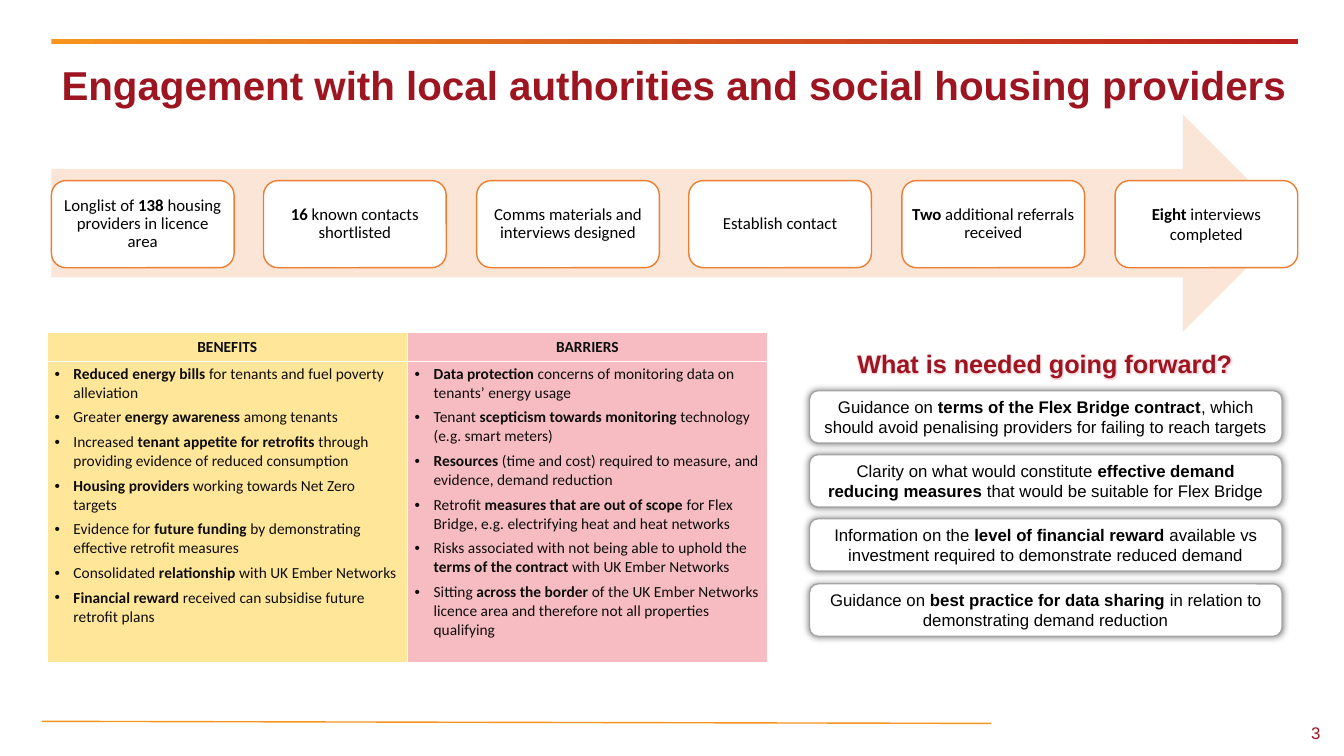
from lxml import etree
from pptx import Presentation
from pptx.dml.color import RGBColor
from pptx.enum.shapes import MSO_CONNECTOR, MSO_SHAPE
from pptx.enum.text import MSO_ANCHOR, MSO_AUTO_SIZE, PP_ALIGN
from pptx.oxml import parse_xml
from pptx.oxml.ns import nsdecls, qn
from pptx.util import Pt

PX = 9525  # EMU per px, 96 px to the inch
CRIMSON = RGBColor(0x9C, 0x15, 0x21)
AMBER = RGBColor(0xF7, 0x94, 0x1E)
RED = RGBColor(0xBA, 0x21, 0x1E)
ORANGE = RGBColor(0xED, 0x7D, 0x31)
PEACH = RGBColor(0xFB, 0xE5, 0xD6)
YELLOW = RGBColor(0xFF, 0xE6, 0x99)
PINK = RGBColor(0xF6, 0xBC, 0xC2)
GREY = RGBColor(0xA5, 0xA5, 0xA5)
INK = RGBColor(0x0D, 0x0D, 0x0D)
BLACK = RGBColor(0, 0, 0)
WHITE = RGBColor(0xFF, 0xFF, 0xFF)

STEPS = [
    "Longlist of **138** housing providers in licence area",
    "**16** known contacts shortlisted",
    "Comms materials and interviews designed",
    "Establish contact",
    "**Two** additional referrals received",
    "**Eight** interviews completed",
]
BENEFITS = [
    "**Reduced energy bills **for tenants and fuel poverty alleviation",
    "Greater **energy awareness **among tenants",
    "Increased** tenant appetite for retrofits **through providing evidence of reduced consumption",
    "**Housing providers **working towards Net Zero targets",
    "Evidence for **future funding **by demonstrating effective retrofit measures",
    "Consolidated **relationship** with UK Ember Networks",
    "**Financial reward **received can subsidise future retrofit plans",
]
BARRIERS = [
    "**Data protection **concerns of monitoring data on tenants’ energy usage",
    "Tenant **scepticism towards monitoring **technology (e.g. smart meters)",
    "**Resources** (time and cost) required to measure, and evidence, demand reduction",
    "Retrofit **measures that are out of scope **for Flex Bridge, e.g. electrifying heat and heat networks",
    "Risks associated with not being able to uphold the **terms of the contract** with UK Ember Networks",
    "Sitting **across the border **of the UK Ember Networks licence area and therefore not all properties qualifying",
]
NEEDS = [
    "Guidance on **terms of the Flex Bridge contract**, which should avoid penalising providers for failing to reach targets",
    "Clarity on what would constitute **effective demand reducing measures **that would be suitable for Flex Bridge",
    "Information on the **level of financial reward **available vs investment required to demonstrate reduced demand",
    "Guidance on **best practice for data sharing **in relation to demonstrating demand reduction",
]


def write(p, text, size, font, color, align=PP_ALIGN.LEFT):
    """Fill a paragraph with runs; text between ** marks is bold."""
    p.alignment = align
    for i, part in enumerate(text.split("**")):
        if part:
            r = p.add_run()
            r.text = part
            r.font.size, r.font.name = Pt(size), font
            r.font.bold = i % 2 == 1
            r.font.color.rgb = color


def add_box(kind, x, y, w, h, fill, line=None):
    sp = s.shapes.add_shape(kind, x * PX, y * PX, w * PX, h * PX)
    sp.shadow.inherit = False
    sp.fill.solid()
    sp.fill.fore_color.rgb = fill
    if line is None:
        sp.line.fill.background()
    else:
        sp.line.color.rgb = line
        sp.line.width = Pt(1)
    sp.text_frame.word_wrap = True
    sp.text_frame.vertical_anchor = MSO_ANCHOR.MIDDLE
    return sp


prs = Presentation()
prs.slide_width, prs.slide_height = 1280 * PX, 720 * PX
s = prs.slides.add_slide(prs.slide_layouts[5])

# Header and footer rules, page number
bar = add_box(MSO_SHAPE.RECTANGLE, 49, 37, 1187, 5, AMBER)
bar.fill.gradient()
bar.fill.gradient_angle = 0
for stop, color in zip(bar.fill.gradient_stops, (AMBER, RED)):
    stop.color.rgb = color

rule = s.shapes.add_connector(MSO_CONNECTOR.STRAIGHT, 40 * PX, 687 * PX, 944 * PX, 689 * PX)
rule.line.color.rgb = AMBER
rule.line.width = Pt(1)
etree.SubElement(rule._element.spPr, qn("a:effectLst"))

number = s.shapes.add_textbox(1129 * PX, 684 * PX, 138 * PX, 29 * PX)
write(number.text_frame.paragraphs[0], "3", 12, "Arial", CRIMSON, PP_ALIGN.RIGHT)

# Title
title = s.shapes.title
title.left, title.top, title.width, title.height = 49 * PX, 56 * PX, 1224 * PX, 54 * PX
tf = title.text_frame
tf.auto_size = MSO_AUTO_SIZE.NONE
tf.vertical_anchor = MSO_ANCHOR.MIDDLE
tf.paragraphs[0].line_spacing = 0.9
write(tf.paragraphs[0], "**Engagement with local authorities and social housing providers**",
      28.8, "Arial", CRIMSON)

# Process arrow with its steps
add_box(MSO_SHAPE.RIGHT_ARROW, 49, 109, 1181, 207, PEACH)
for i, text in enumerate(STEPS):
    sp = add_box(MSO_SHAPE.ROUNDED_RECTANGLE, 49 + i * 1013 // 5, 172, 174, 83, WHITE, ORANGE)
    tf = sp.text_frame
    tf.margin_left = tf.margin_right = tf.margin_top = tf.margin_bottom = 5 * PX
    p = tf.paragraphs[0]
    p.line_spacing = 1.0 if i == len(STEPS) - 1 else 0.9
    write(p, text, 12, "Calibri", BLACK, PP_ALIGN.CENTER)

# Benefits and barriers
table = s.shapes.add_table(2, 2, 45 * PX, 317 * PX, 686 * PX, 314 * PX).table
table.rows[0].height, table.rows[1].height = 27 * PX, 287 * PX
columns = [("BENEFITS", BENEFITS, YELLOW), ("BARRIERS", BARRIERS, PINK)]
for col, (heading, points, fill) in enumerate(columns):
    table.columns[col].width = 343 * PX
    head, body = table.cell(0, col), table.cell(1, col)
    for cell in (head, body):
        cell.fill.solid()
        cell.fill.fore_color.rgb = fill
        cell.margin_left = cell.margin_right = 7 * PX
        cell.margin_top = cell.margin_bottom = 3 * PX
    head.vertical_anchor = MSO_ANCHOR.MIDDLE
    write(head.text_frame.paragraphs[0], f"**{heading}**", 11, "Calibri", INK, PP_ALIGN.CENTER)
    tf = body.text_frame
    for i, text in enumerate(points):
        p = tf.add_paragraph() if i else tf.paragraphs[0]
        pPr = p._p.get_or_add_pPr()
        pPr.set("marL", str(18 * PX))
        pPr.set("indent", str(-18 * PX))
        etree.SubElement(pPr, qn("a:buFont"), typeface="Arial")
        etree.SubElement(pPr, qn("a:buChar"), char="•")
        p.space_before = Pt(2 if i else 0)
        p.space_after = Pt(2)
        write(p, text, 11, "Calibri", INK)

# What is needed going forward
for i, text in enumerate(NEEDS):
    sp = add_box(MSO_SHAPE.ROUNDED_RECTANGLE, 771, 372 + i * 184 // 3, 450, 50, WHITE, GREY)
    sp._element.spPr.find(qn("a:effectLst")).append(parse_xml(
        f'<a:outerShdw {nsdecls("a")} blurRad="63500" algn="ctr" rotWithShape="0">'
        '<a:srgbClr val="000000"><a:alpha val="50000"/></a:srgbClr></a:outerShdw>'))
    write(sp.text_frame.paragraphs[0], text, 12, "Arial", BLACK, PP_ALIGN.CENTER)

heading = s.shapes.add_textbox(807 * PX, 327 * PX, 377 * PX, 38 * PX)
heading.text_frame.word_wrap = False
p = heading.text_frame.paragraphs[0]
write(p, "**What is needed going forward?**", 18, "Arial", CRIMSON)
p.runs[0]._r.rPr.find(qn("a:solidFill")).addnext(parse_xml(
    f'<a:effectLst {nsdecls("a")}><a:glow rad="50800"><a:srgbClr val="{PINK}">'
    '<a:alpha val="60000"/></a:srgbClr></a:glow></a:effectLst>'))

prs.save("out.pptx")
